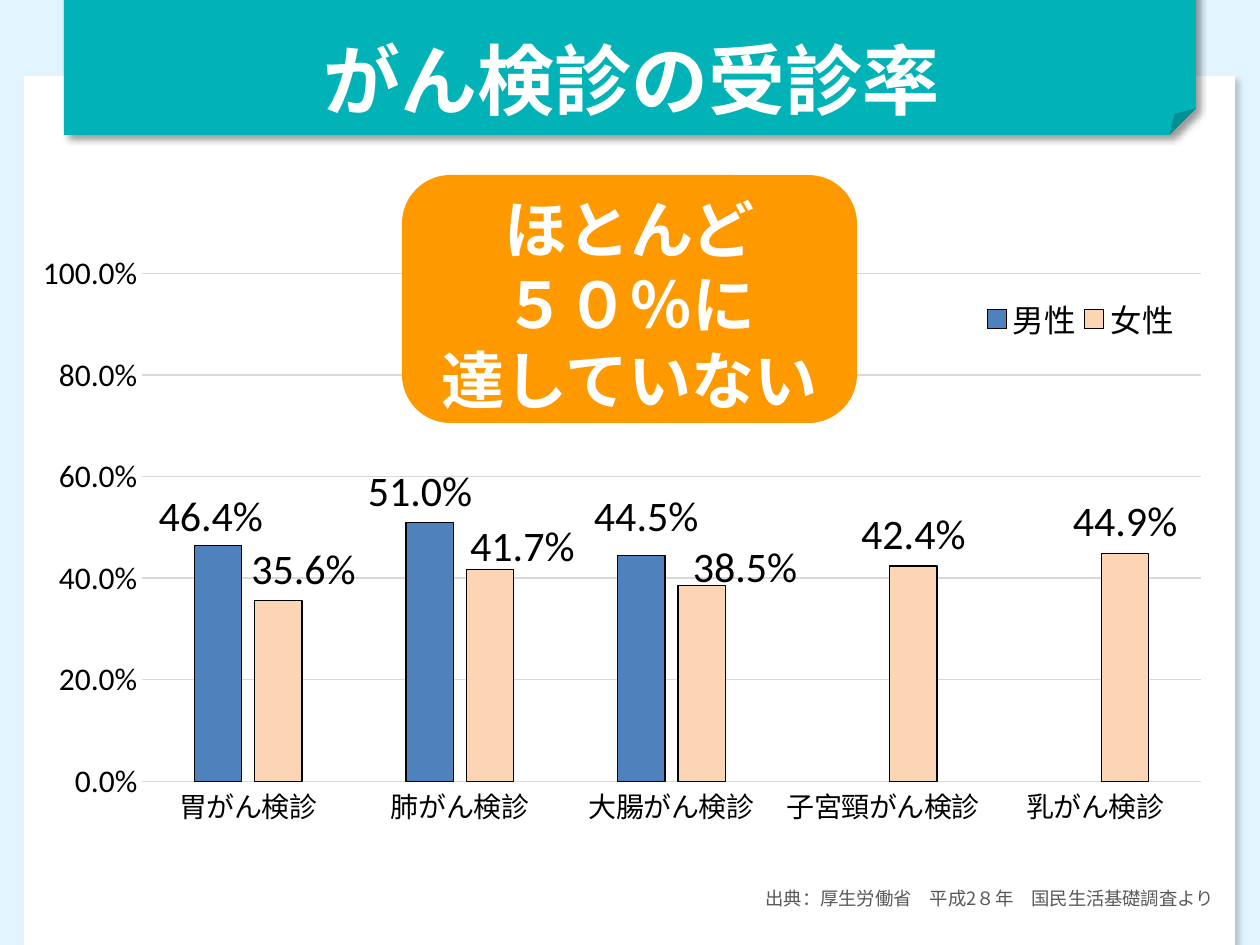
from lxml.etree import SubElement
from pptx import Presentation
from pptx.chart.data import CategoryChartData
from pptx.dml.color import RGBColor
from pptx.enum.chart import XL_CHART_TYPE as ChartType
from pptx.enum.chart import XL_LABEL_POSITION as LabelPos
from pptx.enum.chart import XL_LEGEND_POSITION as LegendPos
from pptx.enum.chart import XL_TICK_MARK as TickMark
from pptx.enum.shapes import MSO_SHAPE as Preset
from pptx.enum.text import MSO_ANCHOR as Anchor
from pptx.enum.text import PP_ALIGN as Align
from pptx.oxml import parse_xml
from pptx.oxml.ns import nsdecls, qn
from pptx.util import Pt

EMU_PER_PX = 914400 / 126


def px(*lengths):
    return [round(length * EMU_PER_PX) for length in lengths]


def rgb(color):
    return RGBColor.from_string(color)


def paint(fill, color):
    fill.solid()
    fill.fore_color.rgb = rgb(color)


def manual_layout(**values):
    parts = "".join(f'<c:{key} val="{value}"/>' for key, value in values.items())
    return parse_xml(f'<c:layout {nsdecls("c")}><c:manualLayout>{parts}'
                     '</c:manualLayout></c:layout>')


class SlideBuilder:
    japanese = "Noto Sans CJK JP"
    chart_font = "Calibri"
    black, white, grid = "000000", "FFFFFF", "D9D9D9"

    def __init__(self, deck, background):
        self.slide = deck.slides.add_slide(deck.slide_layouts[5])
        paint(self.slide.background.fill, background)

    def set_lines(self, frame, lines, size, color, align, font, bold=False,
                  insets=(13, 6, 13, 6)):
        frame.word_wrap = True
        frame.vertical_anchor = Anchor.MIDDLE
        (frame.margin_left, frame.margin_top,
         frame.margin_right, frame.margin_bottom) = px(*insets)
        for index, line in enumerate(lines):
            paragraph = frame.add_paragraph() if index else frame.paragraphs[0]
            paragraph.alignment = align
            run = paragraph.add_run()
            run.text = line
            self.style(run.font, size, color, font)
            run.font.bold = bold
            SubElement(run.font._element, qn("a:ea"), typeface=self.japanese)

    def style(self, font, size, color, name):
        font.size = Pt(size)
        font.name = name
        font.color.rgb = rgb(color)

    def panel(self, preset, box, fill, shadow=None):
        panel = self.slide.shapes.add_shape(preset, *px(*box))
        paint(panel.fill, fill)
        panel.line.fill.background()
        panel.shadow.inherit = False
        if shadow:
            alpha, blur, distance = shadow
            effects = panel._element.spPr.find(qn("a:effectLst"))
            effects.append(parse_xml(
                f'<a:outerShdw {nsdecls("a")} blurRad="{Pt(blur)}" dist="{Pt(distance)}" '
                f'dir="2700000" algn="tl" rotWithShape="0"><a:srgbClr val="{self.black}">'
                f'<a:alpha val="{alpha * 1000}"/></a:srgbClr></a:outerShdw>'))
        return panel

    def title(self, text, box):
        title = self.slide.shapes.title
        title.left, title.top, title.width, title.height = px(*box)
        self.slide.shapes._spTree.append(title._element)
        self.set_lines(title.text_frame, [text], 44, self.white, Align.CENTER,
                       self.japanese, True)

    def source(self, text, box):
        source = self.slide.shapes.add_textbox(*px(*box))
        self.set_lines(source.text_frame, [text], 10.5, "595959", Align.RIGHT, self.japanese)

    def callout(self, lines, box):
        callout = self.panel(Preset.ROUNDED_RECTANGLE, box, "FF9900")
        callout.adjustments[0] = 0.196
        self.set_lines(callout.text_frame, lines, 36, self.white, Align.CENTER, "Arial", True,
                       (13, 15, 13, 6))

    def column_chart(self, box, categories, series):
        data = CategoryChartData(number_format="0.0%")
        data.categories = categories
        for name, values, _, _ in series:
            data.add_series(name, values)
        chart = self.slide.shapes.add_chart(
            ChartType.COLUMN_CLUSTERED, *px(*box), data).chart
        self.style(chart.font, 10, self.black, self.chart_font)
        chart.has_title = False
        space = chart._chartSpace
        space.find(qn("c:chart")).addnext(parse_xml(
            f'<c:spPr {nsdecls("c", "a")}><a:solidFill><a:srgbClr val="{self.white}"/>'
            '</a:solidFill><a:ln><a:noFill/></a:ln></c:spPr>'))
        area = space.chart.plotArea
        for old in area.findall(qn("c:layout")):
            area.remove(old)
        area.insert(0, manual_layout(layoutTarget="inner", xMode="edge", yMode="edge",
                                     x=0.095, y=0.169, w=0.88, h=0.696))
        self.axes(chart)
        self.legend(chart)
        plot = chart.plots[0]
        plot.gap_width, plot.overlap = 219, -27
        plot.vary_by_categories = False
        for bars, (_, _, color, shifts) in zip(plot.series, series):
            paint(bars.format.fill, color)
            bars.format.line.color.rgb = rgb(self.black)
            bars.format.line.width = Pt(0.75)
            self.labels(bars, shifts, box)

    def axes(self, chart):
        for axis, size in ((chart.category_axis, 16), (chart.value_axis, 18)):
            axis.major_tick_mark = axis.minor_tick_mark = TickMark.NONE
            self.style(axis.tick_labels.font, size, self.black, self.chart_font)
        percent = chart.value_axis
        percent.minimum_scale, percent.maximum_scale, percent.major_unit = 0, 1, 0.2
        percent.tick_labels.number_format = "0.0%"
        percent.tick_labels.number_format_is_linked = False
        percent.format.line.fill.background()
        for line in (chart.category_axis.format.line, percent.major_gridlines.format.line):
            line.color.rgb = rgb(self.grid)
            line.width = Pt(0.75)

    def legend(self, chart):
        chart.has_legend = True
        legend = chart.legend
        legend.position = LegendPos.BOTTOM
        legend.include_in_layout = False
        self.style(legend.font, 18, self.black, self.chart_font)
        legend._element.find(qn("c:legendPos")).addnext(manual_layout(
            xMode="edge", yMode="edge", x=0.79, y=0.2, w=0.17, h=0.06))

    def labels(self, bars, shifts, box):
        labels = bars.data_labels
        labels.show_value = True
        labels.number_format = "0.0%"
        labels.number_format_is_linked = False
        labels.position = LabelPos.OUTSIDE_END
        self.style(labels.font, 24, self.black, self.chart_font)
        for index, (right, down) in enumerate(shifts):
            label = bars.points[index].data_label
            self.style(label.font, 24, self.black, self.chart_font)
            label.position = LabelPos.OUTSIDE_END
            entry = labels._element.findall(qn("c:dLbl"))[index]
            entry.insert(1, manual_layout(x=round(right / box[2], 3),
                                          y=round(down / box[3], 3)))


def main():
    deck = Presentation()
    deck.slide_width, deck.slide_height = px(1260, 945)
    page = SlideBuilder(deck, "E1F4FF")
    page.panel(Preset.RECTANGLE, (24, 76, 1211, 891), page.white, (18, 3, 4))
    page.panel(Preset.FOLDED_CORNER, (64, -24, 1132, 159), "01B3B7", (40, 4, 3))
    page.title("がん検診の受診率", (68, 26, 1128, 106))
    page.source("出典：厚生労働省　平成2８年　国民生活基礎調査より", (597, 881, 630, 35))
    page.column_chart(
        (28, 150, 1203, 730),
        ["胃がん検診", "肺がん検診", "大腸がん検診", "子宮頸がん検診", "乳がん検診"],
        [("男性", (0.464, 0.51, 0.445, None, None), "4F81BD",
          ((-7, 3), (-10, 1), (5, -7))),
         ("女性", (0.356, 0.417, 0.385, 0.424, 0.449), "FCD5B5",
          ((25, 1), (33, 9), (43, 14)))])
    page.callout(["ほとんど", "５０％に", "達していない"], (402, 175, 455, 248))
    deck.save("out.pptx")


if __name__ == "__main__":
    main()
